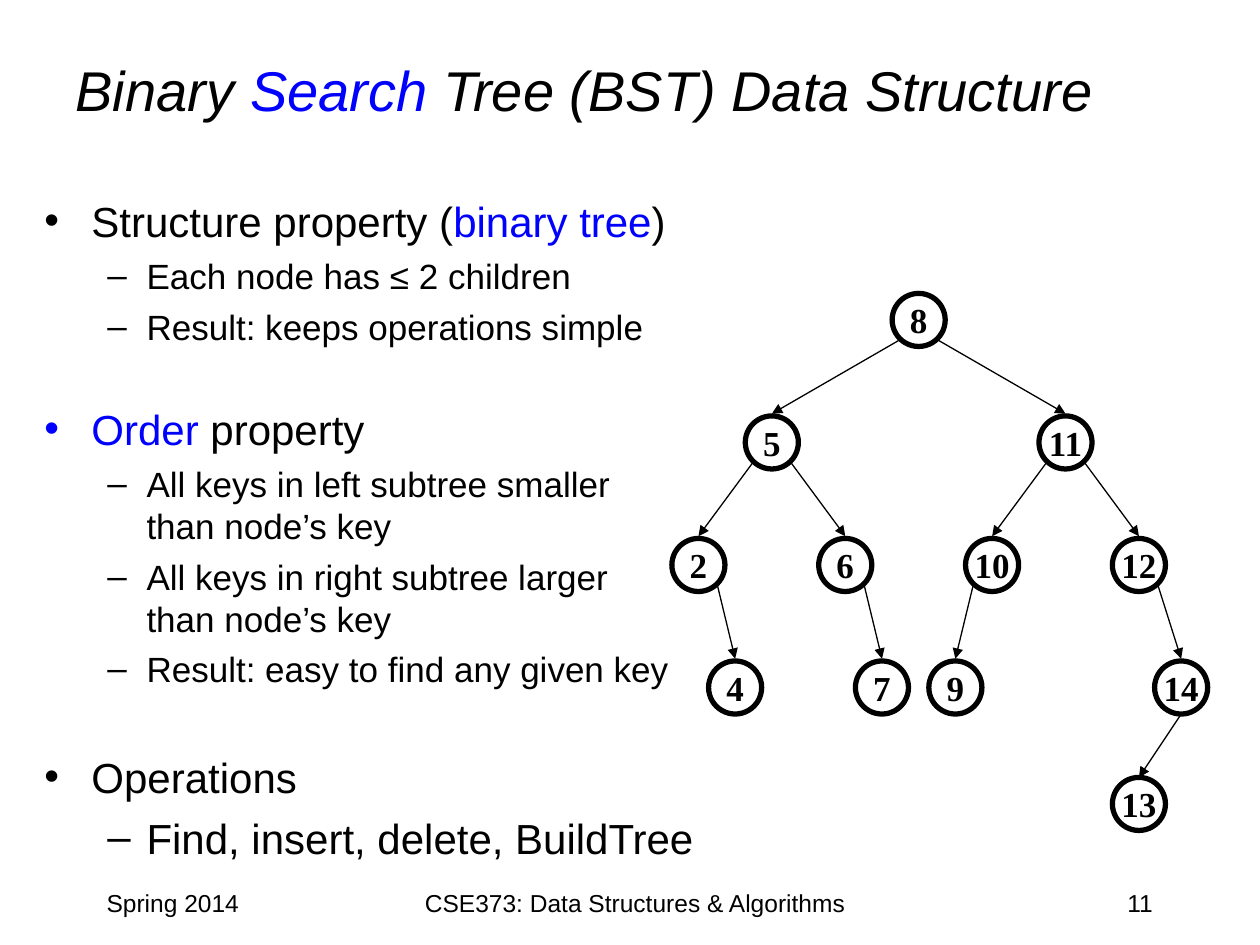
from lxml import etree
from pptx import Presentation
from pptx.dml.color import RGBColor
from pptx.enum.shapes import MSO_CONNECTOR as CONN, MSO_SHAPE as SHAPE
from pptx.enum.text import MSO_ANCHOR as ANCHOR, MSO_AUTO_SIZE as FIT, PP_ALIGN as ALIGN
from pptx.oxml.ns import qn
from pptx.util import Cm, Pt

BLACK = RGBColor(0, 0, 0)
BLUE = RGBColor(0, 0, 255)

# Tree grid in cm: centre of column 0 / row 0, pitches and node size
X0, DX = 14.08, 0.74
Y0, DY = 6.45, 2.47
NODE = 1.07

# key: (column, row, parent key)
TREE = {
    8: (6, 0, None),
    5: (2, 1, 8), 11: (10, 1, 8),
    2: (0, 2, 5), 6: (4, 2, 5), 10: (8, 2, 11), 12: (12, 2, 11),
    4: (1, 3, 2), 7: (5, 3, 6), 9: (7, 3, 10), 14: (13.15, 3, 12),
    13: (12, 3.95, 14),
}

# level, size, space before, runs ("\n" breaks the line)
BODY = [
    (0, 24, 6, [("Structure property (", BLACK), ("binary tree", BLUE), (")", BLACK)]),
    (1, 20, 5, [("Each node has ≤ 2 children", BLACK)]),
    (1, 20, 5, [("Result: keeps operations simple", BLACK)]),
    (0, 24, 32, [("Order", BLUE), (" property", BLACK)]),
    (1, 20, 5, [("All keys in left subtree smaller\nthan node’s key", BLACK)]),
    (1, 20, 5, [("All keys in right subtree larger\nthan node’s key", BLACK)]),
    (1, 20, 5, [("Result: easy to find any given key", BLACK)]),
    (0, 24, 35, [("Operations", BLACK)]),
    (1, 24, 6, [("Find, insert, delete, BuildTree", BLACK)]),
]
INDENTS = [(0.95, -0.95), (2.06, -0.79)]  # left margin and first line, cm


class Deck:
    """Holds the style and the current slide."""

    def __init__(self, slide, font="Arial", node_font="Times New Roman"):
        self.s = slide
        self.font = font
        self.node_font = node_font

    def place(self, sp, x, y, w, h):
        sp.left, sp.top, sp.width, sp.height = Cm(x), Cm(y), Cm(w), Cm(h)

    def run(self, p, text, size, color=BLACK, font=None, bold=False, italic=False):
        for i, line in enumerate(text.split("\n")):
            if i:
                p.add_line_break()
            r = p.add_run()
            r.text = line
            r.font.name = font or self.font
            r.font.size = Pt(size)
            r.font.color.rgb = color
            r.font.bold = bold
            r.font.italic = italic

    def title(self, runs, *box):
        sp = self.s.shapes.title
        self.place(sp, *box)
        tf = sp.text_frame
        tf.auto_size = FIT.NONE
        tf.vertical_anchor = ANCHOR.MIDDLE
        p = tf.paragraphs[0]
        p.alignment = ALIGN.LEFT
        for text, color in runs:
            self.run(p, text, 32, color, italic=True)

    def bullets(self, items, *box):
        sp = self.s.placeholders[1]
        self.place(sp, *box)
        tf = sp.text_frame
        tf.auto_size = FIT.NONE
        for i, (level, size, before, runs) in enumerate(items):
            p = tf.add_paragraph() if i else tf.paragraphs[0]
            p.level = level
            p.space_before = Pt(before)
            left, first = INDENTS[level]
            pPr = p._p.get_or_add_pPr()
            pPr.set("marL", str(Cm(left)))
            pPr.set("indent", str(Cm(first)))
            for text, color in runs:
                self.run(p, text, size, color)

    def label(self, text, align, *box):
        tf = self.s.shapes.add_textbox(*map(Cm, box)).text_frame
        tf.word_wrap = True
        p = tf.paragraphs[0]
        p.alignment = align
        self.run(p, text, 14)

    def node(self, key, cx, cy):
        box = (cx - NODE / 2, cy - NODE / 2, NODE, NODE)
        sp = self.s.shapes.add_shape(SHAPE.OVAL, *map(Cm, box))
        sp.shadow.inherit = False
        sp.fill.background()
        sp.line.color.rgb = BLACK
        sp.line.width = Pt(3)
        tf = sp.text_frame
        tf.word_wrap = False
        tf.vertical_anchor = ANCHOR.MIDDLE
        tf.margin_left = tf.margin_right = tf.margin_top = tf.margin_bottom = 0
        p = tf.paragraphs[0]
        p.alignment = ALIGN.CENTER
        self.run(p, str(key), 20, font=self.node_font, bold=True)

    def arrow(self, x1, y1, x2, y2):
        c = self.s.shapes.add_connector(CONN.STRAIGHT, *map(Cm, (x1, y1, x2, y2)))
        c.line.color.rgb = BLACK
        c.line.width = Pt(0.75)
        etree.SubElement(c.line._get_or_add_ln(), qn("a:tailEnd"), type="triangle")
        etree.SubElement(c._element.spPr, qn("a:effectLst"))


def centre(key):
    col, row, _ = TREE[key]
    return X0 + col * DX, Y0 + row * DY


def main():
    prs = Presentation()
    prs.slide_width, prs.slide_height = Cm(25.4), Cm(19.05)
    deck = Deck(prs.slides.add_slide(prs.slide_layouts[1]))

    # Title and bullet list
    deck.title([("Binary ", BLACK), ("Search", BLUE),
                (" Tree (BST) Data Structure", BLACK)], 1.27, 0.2, 23.06, 3.18)
    deck.bullets(BODY, 0.64, 3.81, 14.4, 13.34)

    # Tree: nodes, then an arrow from each parent to its child
    for key in TREE:
        deck.node(key, *centre(key))
    for key, (_, _, parent) in TREE.items():
        if parent is None:
            continue
        (px, py), (cx, cy) = centre(parent), centre(key)
        if parent == 14:  # leaves from the bottom of the node
            deck.arrow(px, py + NODE / 2, cx, cy - NODE / 2)
        else:  # leaves from the lower corner on the child's side
            side = 0.38 if cx > px else -0.38
            deck.arrow(px + side, py + 0.4, cx, cy - 0.58)

    # Footer
    deck.label("Spring 2014", ALIGN.LEFT, 1.9, 17.78, 5.29, 1.27)
    deck.label("CSE373: Data Structures & Algorithms", ALIGN.CENTER, 8.04, 17.78, 9.53, 1.27)
    deck.label("11", ALIGN.RIGHT, 18.2, 17.78, 5.29, 1.27)

    prs.save("out.pptx")


if __name__ == "__main__":
    main()
